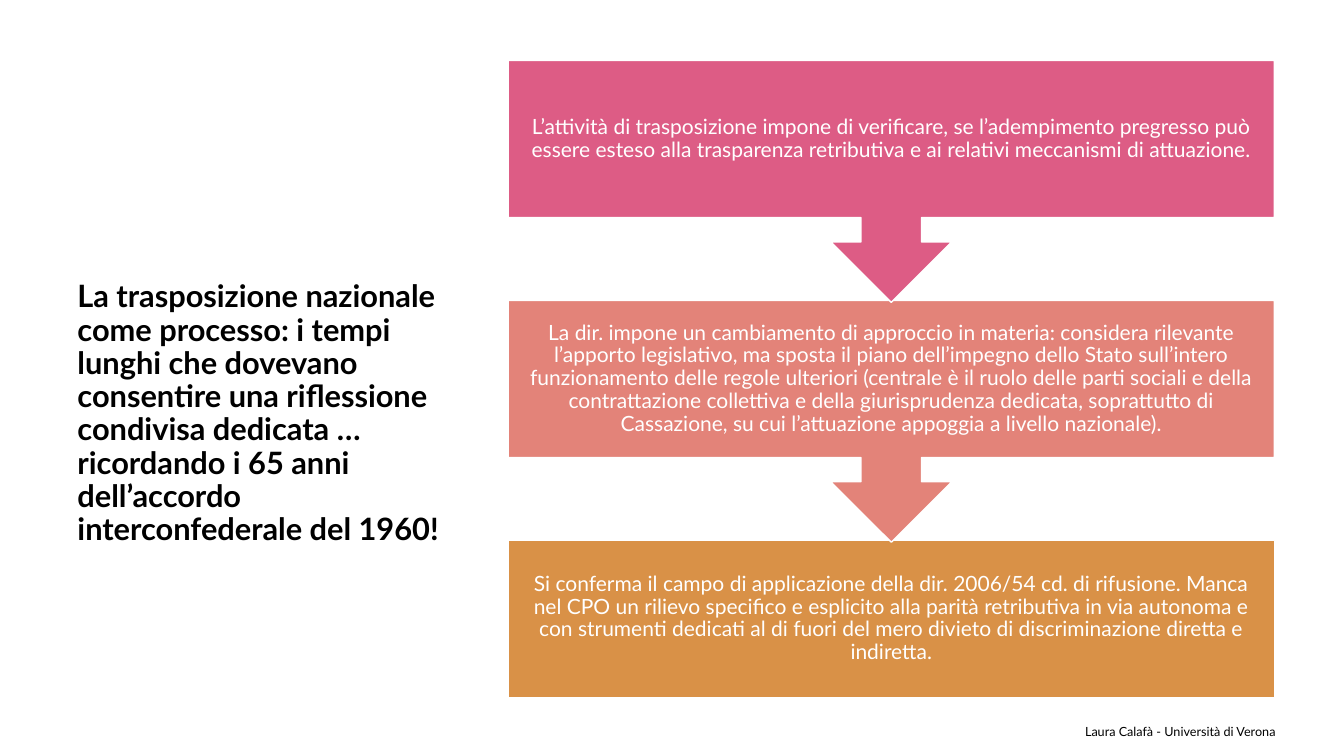
from dataclasses import dataclass

from pptx import Presentation
from pptx.dml.color import RGBColor
from pptx.enum.shapes import MSO_SHAPE
from pptx.enum.text import MSO_ANCHOR, PP_ALIGN
from pptx.text.text import TextFrame
from pptx.util import Inches, Pt

RECTANGLE = MSO_SHAPE.RECTANGLE
ARROW_CALLOUT = MSO_SHAPE.DOWN_ARROW_CALLOUT
TOP, MIDDLE = MSO_ANCHOR.TOP, MSO_ANCHOR.MIDDLE
LEFT, CENTER, RIGHT = PP_ALIGN.LEFT, PP_ALIGN.CENTER, PP_ALIGN.RIGHT

FONT = "Lato"
BLACK, WHITE = "000000", "FFFFFF"
STEP_LEFT, STEP_TOP, STEP_WIDTH = 5.04, 0.6, 7.6
STEP_PITCH = 2.38
CALLOUT_HEIGHT, LAST_HEIGHT = 2.4, 1.56
STEP_INSET = 0.12


@dataclass
class Step:
    text: str
    fill: str


STEPS = [
    Step("L’attività di trasposizione impone di verificare, se l’adempimento "
         "pregresso può essere esteso alla trasparenza retributiva e ai relativi "
         "meccanismi di attuazione.", "DD5C85"),
    Step("La dir. impone un cambiamento di approccio in materia: considera "
         "rilevante l’apporto legislativo, ma sposta il piano dell’impegno dello "
         "Stato sull’intero funzionamento delle regole ulteriori (centrale è il "
         "ruolo delle parti sociali e della contrattazione collettiva e della "
         "giurisprudenza dedicata, soprattutto di Cassazione, su cui l’attuazione "
         "appoggia a livello nazionale).", "E38379"),
    Step("Si conferma il campo di applicazione della dir. 2006/54 cd. di "
         "rifusione. Manca nel CPO un rilievo specifico e esplicito alla parità "
         "retributiva in via autonoma e con strumenti dedicati al di fuori del "
         "mero divieto di discriminazione diretta e indiretta.", "D99147"),
]


def rgb(value: str) -> RGBColor:
    return RGBColor.from_string(value)


def write(frame: TextFrame, text: str, size: float, color: str,
          align: PP_ALIGN, anchor: MSO_ANCHOR, spacing: float = 1.0,
          bold: bool = False) -> None:
    frame.text = text
    frame.word_wrap = True
    frame.vertical_anchor = anchor
    paragraph = frame.paragraphs[0]
    paragraph.alignment = align
    paragraph.line_spacing = spacing
    font = paragraph.runs[0].font
    font.name, font.size, font.bold = FONT, Pt(size), bold
    font.color.rgb = rgb(color)


def add_step(shapes, index: int, step: Step) -> None:
    is_last = index == len(STEPS) - 1
    box = shapes.add_shape(
        RECTANGLE if is_last else ARROW_CALLOUT,
        Inches(STEP_LEFT), Inches(STEP_TOP + index * STEP_PITCH),
        Inches(STEP_WIDTH), Inches(LAST_HEIGHT if is_last else CALLOUT_HEIGHT))
    box.shadow.inherit = False
    box.fill.solid()
    box.fill.fore_color.rgb = rgb(step.fill)
    box.line.color.rgb = rgb(WHITE)
    box.line.width = Pt(1)
    frame = box.text_frame
    frame.margin_left = frame.margin_right = Inches(STEP_INSET)
    frame.margin_top = frame.margin_bottom = Inches(STEP_INSET)
    write(frame, step.text, 15, WHITE, CENTER, MIDDLE, 0.9)


def main() -> None:
    deck = Presentation()
    deck.slide_width, deck.slide_height = Inches(13.33), Inches(7.5)
    shapes = deck.slides.add_slide(deck.slide_layouts[6]).shapes

    # Heading, lowered by its top inset
    heading = shapes.add_textbox(
        Inches(0.67), Inches(0.6), Inches(3.82), Inches(6.33)).text_frame
    heading.margin_top = Inches(2.19)
    write(heading, "La trasposizione nazionale come processo: i tempi lunghi che "
          "dovevano consentire una riflessione condivisa dedicata … ricordando i "
          "65 anni dell’accordo interconfederale del 1960!",
          22, BLACK, LEFT, TOP, 0.9, bold=True)

    # Footer
    footer = shapes.add_textbox(
        Inches(9.71), Inches(7.06), Inches(3.07), Inches(0.4)).text_frame
    write(footer, "Laura Calafà - Università di Verona ", 9, BLACK, RIGHT, MIDDLE)
    footer.paragraphs[0].space_after = Pt(6)

    # Process steps, last one first so that each arrow tip lies on the next box
    for index, step in reversed(list(enumerate(STEPS))):
        add_step(shapes, index, step)

    deck.save("out.pptx")


if __name__ == "__main__":
    main()
